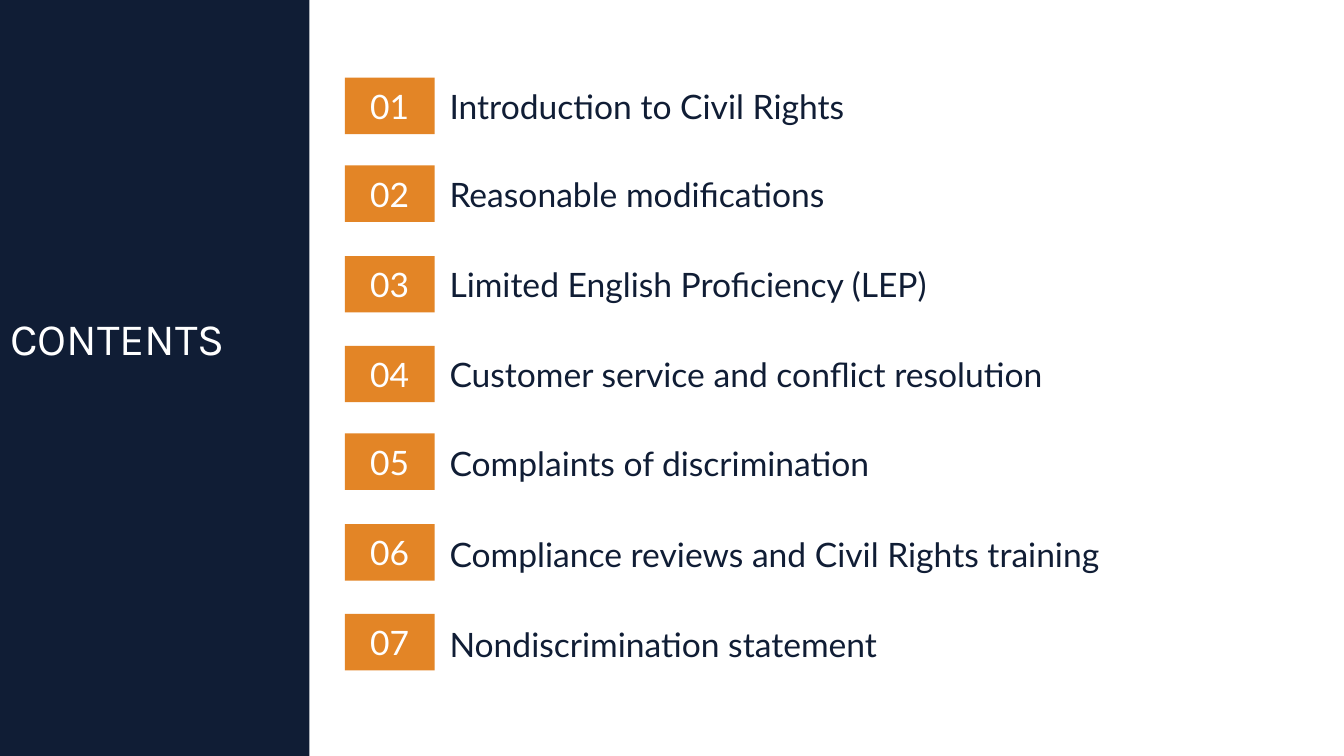
from dataclasses import dataclass

from pptx import Presentation
from pptx.dml.color import RGBColor
from pptx.enum.shapes import MSO_SHAPE
from pptx.enum.text import MSO_ANCHOR, MSO_AUTO_SIZE, PP_ALIGN
from pptx.shapes.autoshape import Shape
from pptx.shapes.shapetree import GroupShapes, SlideShapes
from pptx.slide import Slide
from pptx.util import Inches, Length, Pt

COLORS = {"navy": "101D35", "orange": "E38526", "white": "FFFFFF"}
WIDTH, HEIGHT = Inches(13.33), Inches(7.5)

# All lengths below are percentages of the slide's width or height.
SIDEBAR_WIDTH = 23.03
BADGE_LEFT, BADGE_WIDTH = 25.66, 6.68
LABEL_LEFT, LABEL_WIDTH = 32.71, 65.49
FIRST_TOP, ROW_HEIGHT = 10.27, 7.47
BLOCK_STEP = 35.47
BLOCK_OFFSETS = (0, 11.6, 23.6)
LOWER_LABEL_DROP = 0.2

TOPICS = (
    "Introduction to Civil Rights",
    "Reasonable modifications",
    "Limited English Proficiency (LEP)",
    "Customer service and conflict resolution",
    "Complaints of discrimination",
    "Compliance reviews and Civil Rights training",
    "Nondiscrimination statement",
)


@dataclass(frozen=True)
class Area:
    left: float
    top: float
    width: float
    height: float

    def lengths(self) -> tuple[Length, Length, Length, Length]:
        return (
            Length(round(WIDTH * self.left / 100)),
            Length(round(HEIGHT * self.top / 100)),
            Length(round(WIDTH * self.width / 100)),
            Length(round(HEIGHT * self.height / 100)),
        )


@dataclass(frozen=True)
class Entry:
    number: int
    topic: str

    @property
    def top(self) -> float:
        block, row = divmod(self.number - 1, len(BLOCK_OFFSETS))
        return FIRST_TOP + block * BLOCK_STEP + BLOCK_OFFSETS[row]

    @property
    def label_top(self) -> float:
        return self.top + (LOWER_LABEL_DROP if self.number > 4 else 0)


def color(name: str) -> RGBColor:
    return RGBColor.from_string(COLORS[name])


def write(box: Shape, text: str, size: int, font: str, ink: str,
          align: PP_ALIGN = PP_ALIGN.LEFT) -> None:
    frame = box.text_frame
    frame.word_wrap = True
    frame.auto_size = MSO_AUTO_SIZE.NONE
    frame.vertical_anchor = MSO_ANCHOR.MIDDLE
    para = frame.paragraphs[0]
    para.alignment = align
    span = para.add_run()
    span.text = text
    span.font.size = Pt(size)
    span.font.name = font
    span.font.color.rgb = color(ink)


def add_block(shapes: SlideShapes | GroupShapes, area: Area, fill: str) -> Shape:
    """Add a flat rectangle without an outline."""
    block = shapes.add_shape(MSO_SHAPE.RECTANGLE, *area.lengths())
    block.shadow.inherit = False
    block.fill.solid()
    block.fill.fore_color.rgb = color(fill)
    block.line.fill.background()
    return block


def add_sidebar(page: Slide) -> None:
    title = page.shapes.title
    title.left, title.top, title.width, title.height = Area(
        0, 38.67, SIDEBAR_WIDTH, 12.8).lengths()
    write(title, "CONTENTS", 32, "Karla", "white")
    title.text_frame.paragraphs[0].line_spacing = 0.9
    sidebar = add_block(page.shapes, Area(0, 0, SIDEBAR_WIDTH, 100), "navy")
    title.element.addprevious(sidebar.element)


def add_entry(page: Slide, entry: Entry) -> None:
    group = page.shapes.add_group_shape()
    badge = add_block(
        group.shapes, Area(BADGE_LEFT, entry.top, BADGE_WIDTH, ROW_HEIGHT), "orange")
    write(badge, f"{entry.number:02d}", 24, "Lato", "white", PP_ALIGN.CENTER)
    label = group.shapes.add_textbox(
        *Area(LABEL_LEFT, entry.label_top, LABEL_WIDTH, ROW_HEIGHT).lengths())
    write(label, entry.topic, 24, "Lato", "navy")


def main() -> None:
    deck = Presentation()
    deck.slide_width, deck.slide_height = WIDTH, HEIGHT
    page = deck.slides.add_slide(deck.slide_layouts.get_by_name("Title Only"))
    page.background.fill.solid()
    page.background.fill.fore_color.rgb = color("white")
    add_sidebar(page)
    for number, topic in enumerate(TOPICS, start=1):
        add_entry(page, Entry(number, topic))
    deck.save("out.pptx")


if __name__ == "__main__":
    main()
